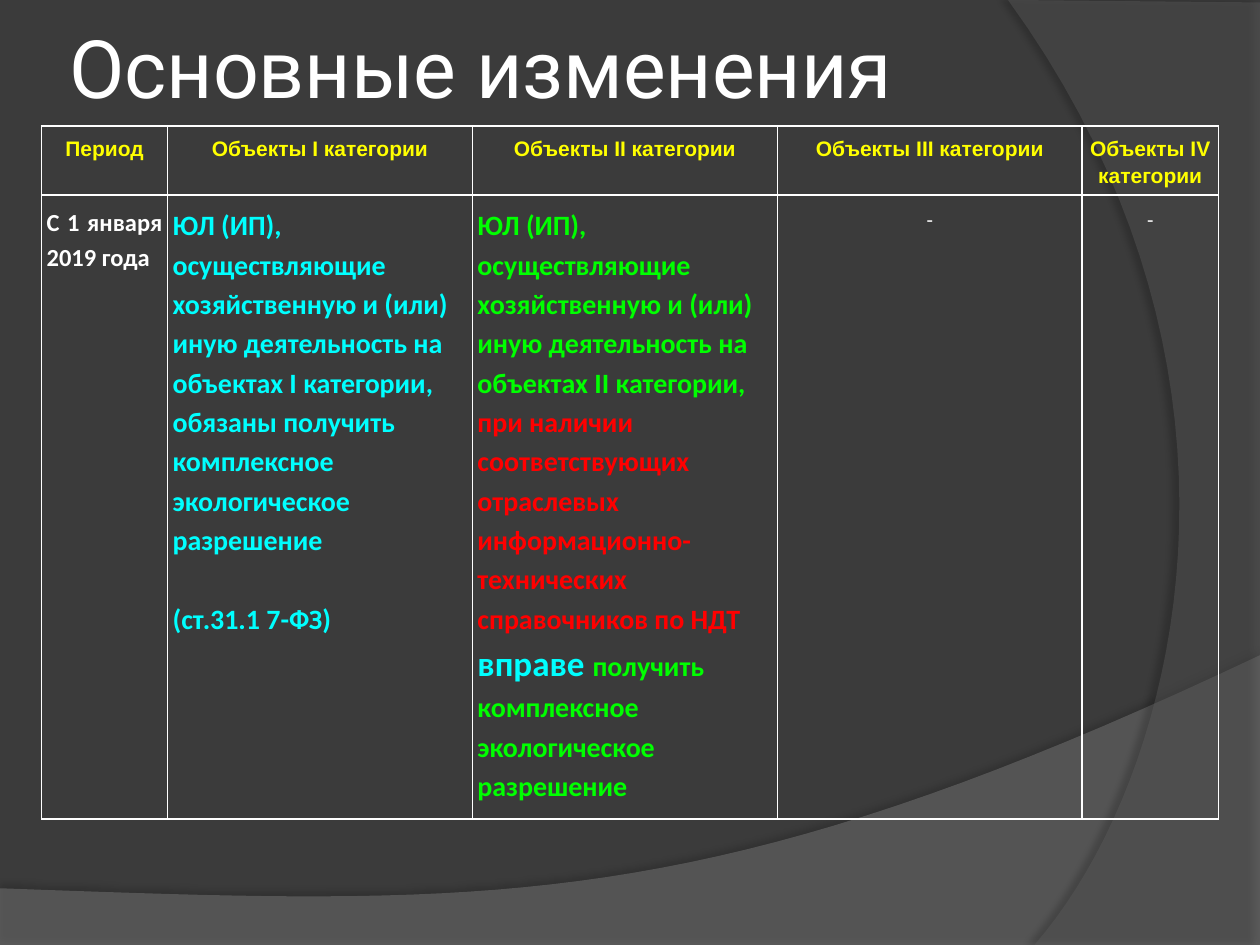
from dataclasses import dataclass

from lxml import etree
from pptx import Presentation
from pptx.dml.color import RGBColor
from pptx.enum.text import MSO_ANCHOR, MSO_AUTO_SIZE, PP_ALIGN
from pptx.oxml.ns import qn
from pptx.util import Inches, Pt

LEFT, CENTER, JUSTIFY = PP_ALIGN.LEFT, PP_ALIGN.CENTER, PP_ALIGN.JUSTIFY
MIDDLE, NO_FIT = MSO_ANCHOR.MIDDLE, MSO_AUTO_SIZE.NONE
TITLE_ONLY = 5
CURVE_STEPS = 40


@dataclass(frozen=True)
class Theme:
    background: str = "3B3B3B"
    wave: str = "7F7F7F"
    arc: str = "5E5E5E"
    shadow: str = "000000"
    white: str = "FFFFFF"
    yellow: str = "FFFF00"
    cyan: str = "00FFFF"
    green: str = "00FF00"
    red: str = "FF0000"
    title_font: str = "Roboto"
    header_font: str = "Arial"
    body_font: str = "Calibri"
    title_size: int = 46
    small_size: int = 12
    period_size: int = 14
    body_size: int = 16
    accent_size: int = 20
    line_spacing: float = 1.15


def apply(target, values):
    for name, value in values.items():
        setattr(target, name, value)


def add_xml(parent, tag, **attributes):
    return etree.SubElement(parent, qn(tag), attributes)


def add_color(parent, color, opacity=100):
    srgb = add_xml(parent, "a:srgbClr", val=color)
    if opacity < 100:
        add_xml(srgb, "a:alpha", val=str(opacity * 1000))


def bezier(*controls):
    """Points along a cubic curve, without its first point."""
    for step in range(1, CURVE_STEPS + 1):
        t = step / CURVE_STEPS
        weights = ((1 - t) ** 3, 3 * t * (1 - t) ** 2, 3 * t * t * (1 - t), t ** 3)
        yield tuple(sum(w * point[axis] for w, point in zip(weights, controls))
                    for axis in (0, 1))


class SlideBuilder:
    def __init__(self, presentation, theme):
        self.theme = theme
        self.slide = presentation.slides.add_slide(
            presentation.slide_layouts[TITLE_ONLY])
        fill = self.slide.background.fill
        fill.solid()
        fill.fore_color.rgb = RGBColor.from_string(theme.background)

    def run(self, paragraph, text, color, size, font, bold=True):
        run = paragraph.add_run()
        run.text = text
        apply(run.font, {"name": font, "size": Pt(size), "bold": bold})
        run.font.color.rgb = RGBColor.from_string(color)

    def backdrop(self, points, color, opacity, shadow):
        """Translucent outline; shadow is opacity, blur, distance, angle."""
        start, *rest = [(Inches(x), Inches(y)) for x, y in points]
        builder = self.slide.shapes.build_freeform(*start)
        builder.add_line_segments(rest, close=True)
        shape = builder.convert_to_shape()
        shape.fill.solid()
        shape.fill.fore_color.rgb = RGBColor.from_string(color)
        shape.line.fill.background()
        shape.shadow.inherit = False
        properties = shape.element.spPr
        add_xml(properties.find(f"{qn('a:solidFill')}/{qn('a:srgbClr')}"),
                "a:alpha", val=str(opacity * 1000))
        shade, blur, distance, angle = shadow
        outer = add_xml(properties.find(qn("a:effectLst")), "a:outerShdw",
                        blurRad=str(Pt(blur)), dist=str(Pt(distance)),
                        dir=str(angle * 60000), algn="ctr", rotWithShape="0")
        add_color(outer, self.theme.shadow, shade)

    def title(self, text, left, top, width, height):
        title = self.slide.shapes.title
        apply(title, {"left": Inches(left), "top": Inches(top),
                      "width": Inches(width), "height": Inches(height)})
        margin = Inches(0.05)
        apply(title.text_frame, {
            "margin_left": margin, "margin_right": margin,
            "margin_top": margin, "margin_bottom": margin,
            "vertical_anchor": MIDDLE, "auto_size": NO_FIT, "word_wrap": True})
        paragraph = title.text_frame.paragraphs[0]
        paragraph.alignment = LEFT
        self.run(paragraph, text, self.theme.white, self.theme.title_size,
                 self.theme.title_font, bold=False)
        # Keep the title above the backdrop
        self.slide.shapes.element.append(title.element)

    def borders(self, cell):
        properties = cell.fill._xPr
        for position, side in enumerate(("a:lnL", "a:lnR", "a:lnT", "a:lnB")):
            line = etree.Element(qn(side), w=str(Pt(1)))
            add_color(add_xml(line, "a:solidFill"), self.theme.white)
            properties.insert(position, line)

    def cell(self, cell, paragraphs, alignment, margins):
        """Each paragraph is a list of run argument tuples."""
        cell.fill.background()
        self.borders(cell)
        side, edge = (Inches(margin) for margin in margins)
        apply(cell, {"margin_left": side, "margin_right": side,
                     "margin_top": edge, "margin_bottom": edge})
        for index, runs in enumerate(paragraphs):
            frame = cell.text_frame
            paragraph = frame.add_paragraph() if index else frame.paragraphs[0]
            apply(paragraph, {"alignment": alignment,
                              "line_spacing": self.theme.line_spacing})
            if index:
                paragraph.space_before = Pt(22.5)
            for run in runs:
                self.run(paragraph, *run)

    def table(self, left, top, widths, heights, rows):
        table = self.slide.shapes.add_table(
            len(heights), len(widths), Inches(left), Inches(top),
            Inches(sum(widths)), Inches(sum(heights))).table
        apply(table, {"first_row": False, "horz_banding": False})
        for column, width in zip(table.columns, widths):
            column.width = Inches(width)
        for row, height, (margins, contents) in zip(table.rows, heights, rows):
            row.height = Inches(height)
            for cell, (paragraphs, alignment) in zip(row.cells, contents):
                self.cell(cell, paragraphs, alignment, margins)


def main():
    presentation = Presentation()
    apply(presentation, {"slide_width": Inches(10), "slide_height": Inches(7.5)})
    theme = Theme()
    builder = SlideBuilder(presentation, theme)

    # Backdrop: wave along the bottom, arc on the right
    wave = [(0, 7.05), (0, 7.51), (10, 7.51), (10, 5.2),
            *bezier((10, 5.2), (5.59, 7.29), (3.91, 7.19), (0, 7.05))]
    arc = [(10, 0.02), (10, 7.5), (8.21, 7.5),
           *bezier((8.21, 7.5), (9.35, 6.19), (10.18, 3), (8, 0))]
    builder.backdrop(wave, theme.wave, 45, (35, 4, 3.5, 270))
    builder.backdrop(arc, theme.arc, 40, (45, 4, 4, 180))

    builder.title("Основные изменения", 0.5, 0.3, 8.17, 0.45)

    # Header row
    headings = ["Период"] + [f"Объекты {number} категории"
                             for number in ("I", "II", "III", "IV")]
    header = [([[(heading, theme.yellow, theme.small_size, theme.header_font)]],
               CENTER) for heading in headings]

    # Requirements row
    def body(text, color, size=theme.body_size, bold=True):
        return text, color, size, theme.body_font, bold

    subject = ("ЮЛ (ИП), осуществляющие хозяйственную и (или) иную "
               "деятельность на объектах {} категории, ")
    permit = "получить комплексное экологическое разрешение"
    period = [[body("С 1 января 2019 года", theme.white, theme.period_size)]]
    first_category = [
        [body(subject.format("I") + "обязаны " + permit, theme.cyan)],
        [body("(ст.31.1 7-ФЗ)", theme.cyan)]]
    second_category = [[
        body(subject.format("II"), theme.green),
        body("при наличии соответствующих отраслевых информационно-технических "
             "справочников по НДТ ", theme.red),
        body("вправе ", theme.cyan, theme.accent_size),
        body(permit, theme.green)]]
    no_change = [[body("-", theme.white, theme.small_size, False)]]
    requirements = [(period, JUSTIFY), (first_category, LEFT),
                    (second_category, LEFT), (no_change, CENTER),
                    (no_change, CENTER)]

    builder.table(0.33, 1, [1, 2.42, 2.42, 2.42, 1.08], [0.54, 4.95],
                  [((0.03, 0.06), header), ((0.04, 0.07), requirements)])
    presentation.save("out.pptx")


if __name__ == "__main__":
    main()
